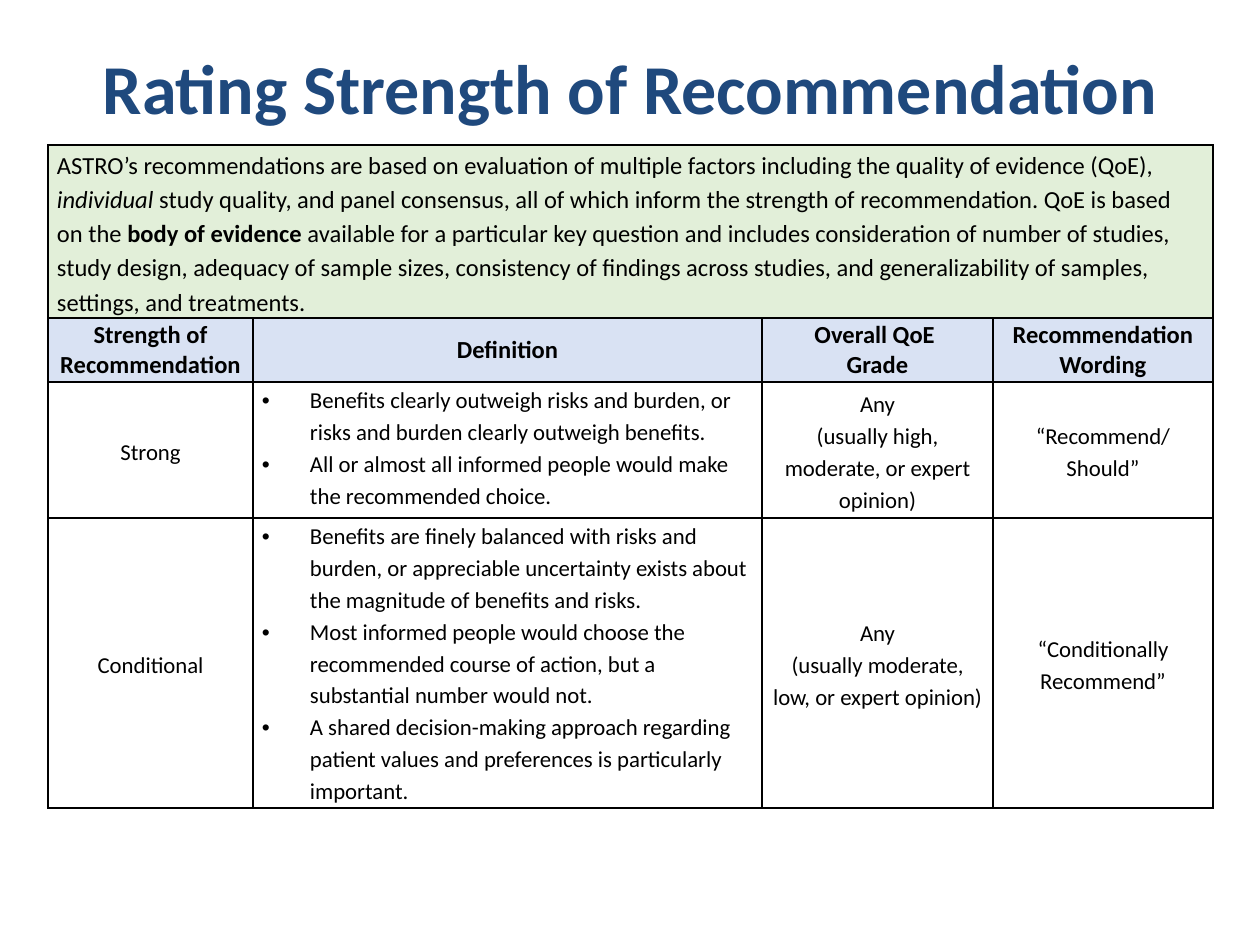
import pptx
import pptx.dml.color
import pptx.enum.text
import pptx.oxml.ns
import pptx.util
from lxml import etree

COLORS = {
    "title": "1F497D",
    "text": "000000",
    "border": "000000",
    "summary": "E2EFD9",
    "header": "D9E2F3",
}
ALIGN = pptx.enum.text.PP_ALIGN
ANCHOR = pptx.enum.text.MSO_ANCHOR


def px(length):
    return round(length * 914400 / 126)


def rgb(name):
    return pptx.dml.color.RGBColor.from_string(COLORS[name])


def add_xml(parent, tag, **attributes):
    node = etree.SubElement(parent, pptx.oxml.ns.qn(tag))
    for key, value in attributes.items():
        node.set(key, str(value))
    return node


def write(paragraph, text, font="Calibri", size=14, color="text", bold=False,
          italic=False, align=ALIGN.CENTER, spacing=None, bullet=False):
    if bullet:
        properties = paragraph._p.get_or_add_pPr()
        properties.set("marL", str(px(48)))
        properties.set("indent", str(-px(48)))
        add_xml(properties, "a:buFont", typeface="Arial")
        add_xml(properties, "a:buChar", char="•")
        tabs = add_xml(properties, "a:tabLst")
        add_xml(tabs, "a:tab", pos=px(63), algn="l")
    paragraph.alignment = align
    if spacing:
        paragraph.line_spacing = spacing
    run = paragraph.add_run()
    run.text = text
    run.font.name = font
    run.font.size = pptx.util.Pt(size)
    run.font.bold = bold
    run.font.italic = italic
    run.font.color.rgb = rgb(color)


class SlideBuilder:
    def __init__(self, deck):
        self.slide = deck.slides.add_slide(deck.slide_layouts[5])

    def title(self, text, left, top, width, height):
        heading = self.slide.shapes.title
        heading.left, heading.top = px(left), px(top)
        heading.width, heading.height = px(width), px(height)
        frame = heading.text_frame
        frame.word_wrap = True
        frame.auto_size = pptx.enum.text.MSO_AUTO_SIZE.NONE
        frame.vertical_anchor = ANCHOR.TOP
        write(frame.paragraphs[0], text, size=40, color="title", bold=True)

    def table(self, left, top, widths, heights):
        grid = self.slide.shapes.add_table(
            len(heights), len(widths), px(left), px(top),
            px(sum(widths)), px(sum(heights))).table
        grid.first_row = False
        grid.horz_banding = False
        for column, width in zip(grid.columns, widths):
            column.width = px(width)
        for row, height in zip(grid.rows, heights):
            row.height = px(height)
        for cell in grid.iter_cells():
            self.style_cell(cell)
        return grid

    def style_cell(self, cell):
        cell.margin_left = cell.margin_right = px(9)
        cell.margin_top, cell.margin_bottom = px(1), 0
        cell.vertical_anchor = ANCHOR.MIDDLE
        properties = cell._tc.get_or_add_tcPr()
        for side in ("a:lnL", "a:lnR", "a:lnT", "a:lnB"):
            line = add_xml(properties, side, w=pptx.util.Pt(1))
            fill = add_xml(line, "a:solidFill")
            add_xml(fill, "a:srgbClr", val=COLORS["border"])
        cell.fill.background()

    def fill_cell(self, cell, lines, fill=None, **style):
        if fill:
            cell.fill.solid()
            cell.fill.fore_color.rgb = rgb(fill)
        frame = cell.text_frame
        for index, line in enumerate(lines):
            paragraph = frame.add_paragraph() if index else frame.paragraphs[0]
            write(paragraph, line, **style)


SUMMARY = [
    ("ASTRO’s recommendations are based on evaluation of multiple factors "
     "including the quality of evidence (QoE), ", {}),
    ("individual", {"italic": True}),
    (" study quality, and panel consensus, all of which inform the strength of "
     "recommendation. QoE is based on the ", {}),
    ("body of evidence", {"bold": True}),
    (" available for a particular key question and includes consideration of "
     "number of studies, study design, adequacy of sample sizes, consistency of "
     "findings across studies, and generalizability of samples, settings, and "
     "treatments.", {}),
]
HEADERS = [
    ["Strength of Recommendation"],
    ["Definition"],
    ["Overall QoE ", "Grade"],
    ["Recommendation Wording"],
]
RATINGS = [
    [
        ["Strong"],
        ["Benefits clearly outweigh risks and burden, or risks and burden "
         "clearly outweigh benefits.",
         "All or almost all informed people would make the recommended choice."],
        ["Any", "(usually high, moderate, or expert opinion)"],
        ["“Recommend/ Should”"],
    ],
    [
        ["Conditional"],
        ["Benefits are finely balanced with risks and burden, or appreciable "
         "uncertainty exists about the magnitude of benefits and risks.",
         "Most informed people would choose the recommended course of action, "
         "but a substantial number would not.",
         "A shared decision-making approach regarding patient values and "
         "preferences is particularly important."],
        ["Any", "(usually moderate, low, or expert opinion)"],
        ["“Conditionally Recommend”"],
    ],
]
DEFINITION = 1


def main():
    deck = pptx.Presentation()
    deck.slide_width, deck.slide_height = px(1260), px(945)
    builder = SlideBuilder(deck)
    builder.title("Rating Strength of Recommendation", 63, 38, 1134, 157)
    ratings = builder.table(48, 145, [205, 509, 231, 220], [173, 64, 136, 290])

    summary = ratings.cell(0, 0)
    summary.merge(ratings.cell(0, 3))
    builder.fill_cell(summary, [], fill="summary")
    for text, emphasis in SUMMARY:
        write(summary.text_frame.paragraphs[0], text, align=ALIGN.LEFT,
              spacing=1.15, **emphasis)

    for column, lines in enumerate(HEADERS):
        builder.fill_cell(ratings.cell(1, column), lines, fill="header", bold=True)

    for row, rating in enumerate(RATINGS, start=2):
        for column, lines in enumerate(rating):
            cell = ratings.cell(row, column)
            listed = column == DEFINITION
            if listed:
                cell.vertical_anchor = ANCHOR.TOP
            builder.fill_cell(cell, lines, size=13, spacing=1.15, bullet=listed,
                              align=ALIGN.LEFT if listed else ALIGN.CENTER)

    deck.save("out.pptx")


if __name__ == "__main__":
    main()
